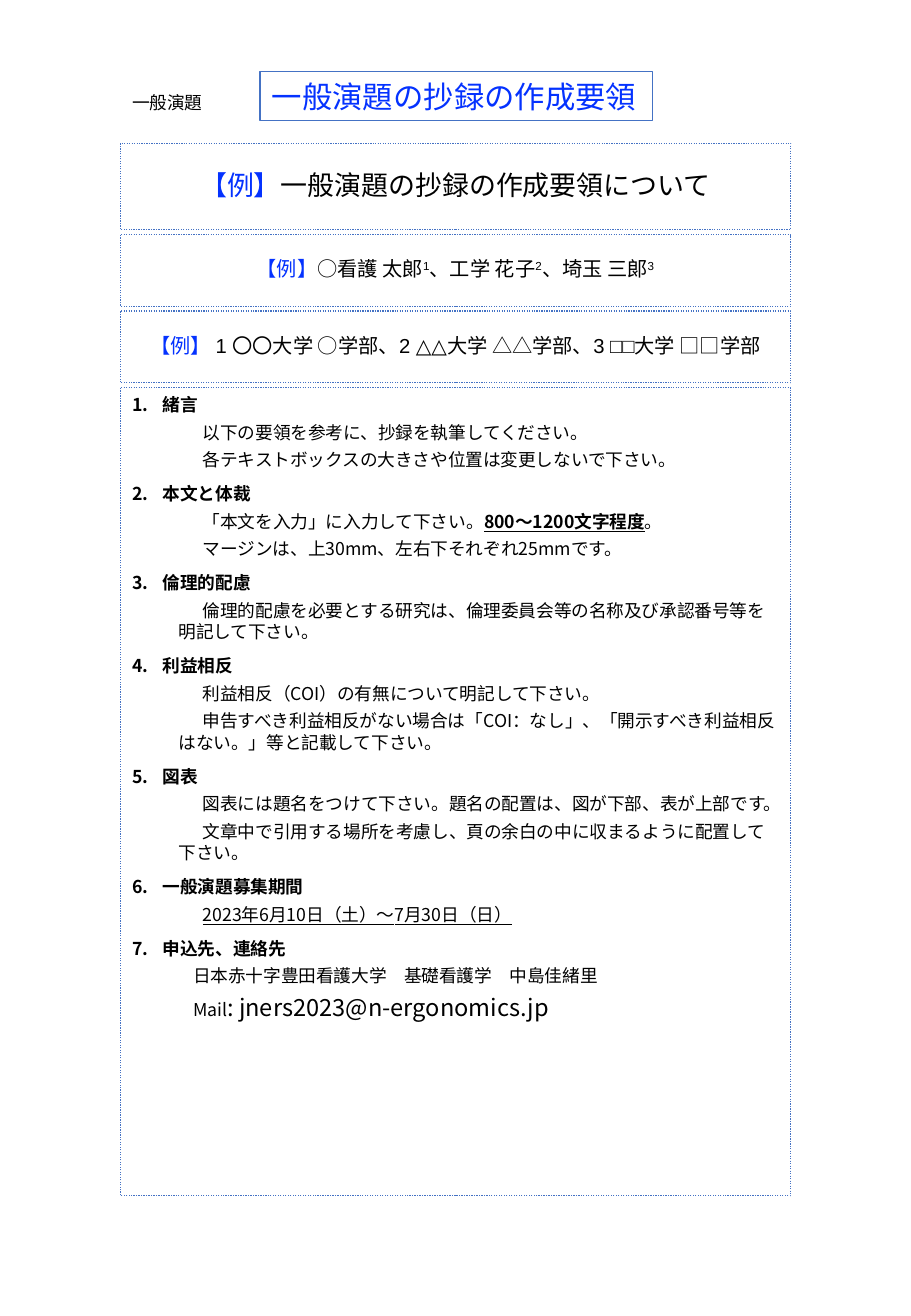
from dataclasses import dataclass

from lxml.etree import SubElement
from pptx import Presentation
from pptx.dml.color import RGBColor
from pptx.enum.dml import MSO_LINE
from pptx.enum.text import MSO_ANCHOR, MSO_AUTO_SIZE, PP_ALIGN
from pptx.oxml.ns import qn
from pptx.util import Pt

PX = 9144  # EMU per px, at 100 px to the inch


@dataclass(frozen=True)
class Theme:
    ink: str = "000000"
    blue: str = "0432FF"
    border: str = "4472C4"
    asian: str = "Noto Sans CJK JP"
    latin: str = "Arial"
    label: str = "Calibri"
    body_size: float = 10.5
    author_size: float = 12
    mail_size: float = 14
    title_size: float = 16
    heading_size: float = 18


THEME = Theme()
EXAMPLE = "【例】"

# Each section: heading, then its lines; a line is a list of (text, format).
STRONG = {"bold": True, "underline": True}
SECTIONS = [
    ("緒言", [
        [("以下の要領を参考に、抄録を執筆してください。", {})],
        [("各テキストボックスの大きさや位置は変更しないで下さい。", {})],
    ]),
    ("本文と体裁", [
        [("「本文を入力」に入力して下さい。", {}), ("800〜1200文字程度", STRONG), ("。", {})],
        [("マージンは、上30mm、左右下それぞれ25mmです。", {})],
    ]),
    ("倫理的配慮", [
        [("倫理的配慮を必要とする研究は、倫理委員会等の名称及び承認番号等を明記して下さい。", {})],
    ]),
    ("利益相反", [
        [("利益相反（COI）の有無について明記して下さい。", {})],
        [("申告すべき利益相反がない場合は「COI：なし」、「開示すべき利益相反はない。」等と記載して下さい。", {})],
    ]),
    ("図表", [
        [("図表には題名をつけて下さい。題名の配置は、図が下部、表が上部です。", {})],
        [("文章中で引用する場所を考慮し、頁の余白の中に収まるように配置して下さい。", {})],
    ]),
    ("一般演題募集期間", [
        [("2023年6月10日（土）〜7月30日（日）", {"underline": True})],
    ]),
]
CONTACT = ("申込先、連絡先", [
    [("日本赤十字豊田看護大学　基礎看護学　中島佳緒里", {})],
    [("Mail", {}), (": jners2023@n-ergonomics.jp", {"size": THEME.mail_size})],
])


def write(para, text, size=THEME.body_size, font=THEME.asian, color=THEME.ink,
          bold=False, underline=False, superscript=False):
    span = para.add_run()
    span.text = text
    span.font.size = Pt(size)
    span.font.name = font
    span.font.bold = bold
    span.font.underline = underline
    span.font.color.rgb = RGBColor.from_string(color)
    properties = span._r.get_or_add_rPr()
    SubElement(properties, qn("a:ea"), typeface=THEME.asian)
    if superscript:
        properties.set("baseline", "30000")


def format_para(para, margin=0, indent=0, numbered=False, level=0, before=0,
                spacing=1.0, align=PP_ALIGN.LEFT):
    properties = para._p.get_or_add_pPr()
    properties.set("marL", str(margin * PX))
    properties.set("indent", str(indent * PX))
    if numbered:
        SubElement(properties, qn("a:buFont"), typeface=THEME.asian)
        SubElement(properties, qn("a:buAutoNum"), type="arabicPeriod")
    else:
        SubElement(properties, qn("a:buNone"))
    para.level = level
    para.alignment = align
    para.line_spacing = spacing
    para.space_before = Pt(before)
    para.space_after = Pt(0)


def place(shape, box):
    shape.left, shape.top, shape.width, shape.height = (value * PX for value in box)


def outline(shape, dash=None):
    shape.line.color.rgb = RGBColor.from_string(THEME.border)
    shape.line.width = Pt(0.75)
    if dash:
        shape.line.dash_style = dash


def frame_placeholder(shape, box, anchor):
    place(shape, box)
    outline(shape, MSO_LINE.ROUND_DOT)
    frame = shape.text_frame
    frame.word_wrap = True
    frame.auto_size = MSO_AUTO_SIZE.NONE
    frame.vertical_anchor = anchor
    return frame


def add_label(page, box, text, **style):
    shape = page.shapes.add_textbox(*(value * PX for value in box))
    frame = shape.text_frame
    frame.word_wrap = False
    frame.auto_size = MSO_AUTO_SIZE.SHAPE_TO_FIT_TEXT
    write(frame.paragraphs[0], text, font=THEME.label, **style)
    return shape


def fill_example(shape, box, spans, **style):
    """Centre one line that opens with the blue example mark."""
    para = frame_placeholder(shape, box, MSO_ANCHOR.MIDDLE).paragraphs[0]
    format_para(para, align=PP_ALIGN.CENTER, spacing=0.9)
    write(para, EXAMPLE, color=THEME.blue, **style)
    for text, extra in spans:
        write(para, text, **style, **extra)


def fill_sections(shape, box):
    frame = frame_placeholder(shape, box, MSO_ANCHOR.TOP)
    plain = {"level": 1, "margin": 38, "indent": 20}
    contact = {"level": 2, "margin": 50}
    groups = [(*section, plain) for section in SECTIONS] + [(*CONTACT, contact)]
    for number, (heading, lines, layout) in enumerate(groups):
        para = frame.add_paragraph() if number else frame.paragraphs[0]
        format_para(para, margin=25, indent=-25, numbered=True,
                    before=7.5 if number else 0)
        write(para, heading, bold=True)
        for line in lines:
            para = frame.add_paragraph()
            format_para(para, before=3.8, **layout)
            for text, style in line:
                write(para, text, **style)


def build_abstract_page(deck):
    page = deck.slides.add_slide(deck.slide_layouts.get_by_name("Comparison"))
    holders = {shape.placeholder_format.idx: shape for shape in page.placeholders}
    title, authors, sections, affiliations, spare = (holders[i] for i in range(5))
    spare.element.getparent().remove(spare.element)

    left, width = 99, 552
    add_label(page, (99, 71, 82, 29), "一般演題")
    heading = add_label(page, (214, 59, 323, 40), "一般演題の抄録の作成要領",
                        size=THEME.heading_size, color=THEME.blue)
    outline(heading)

    fill_example(title, (left, 118, width, 71),
                 [("一般演題の抄録の作成要領について", {})], size=THEME.title_size)
    raised = {"superscript": True}
    small = {"size": THEME.author_size, "font": THEME.latin}
    fill_example(authors, (left, 193, width, 59),
                 [("○看護 太郎", {}), ("1", raised), ("、工学 花子", {}),
                  ("2", raised), ("、埼玉 三郎", {}), ("3", raised)], **small)
    fill_example(affiliations, (left, 256, width, 59),
                 [(" 1 〇〇大学 ○学部、2 △△大学 △△学部、3 □□大学 □□学部", {})], **small)
    fill_sections(sections, (left, 319, width, 665))


def main():
    deck = Presentation()
    deck.slide_width, deck.slide_height = 750 * PX, 1083 * PX
    build_abstract_page(deck)
    deck.save("out.pptx")


if __name__ == "__main__":
    main()
